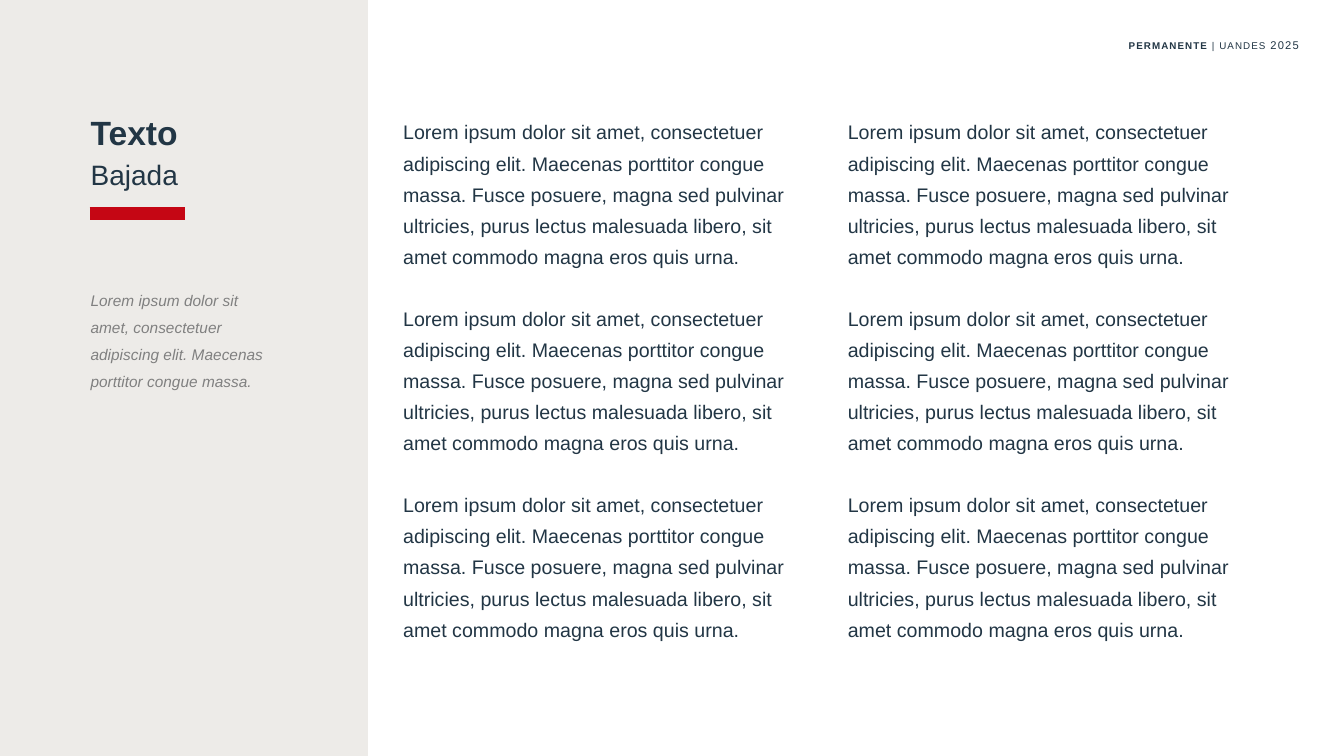
"""Build a text slide with a title panel and two columns of paragraphs."""
from dataclasses import dataclass

from lxml.etree import SubElement
from pptx import Presentation
from pptx.dml.color import RGBColor
from pptx.enum.shapes import MSO_CONNECTOR, MSO_SHAPE
from pptx.enum.text import PP_ALIGN
from pptx.oxml.ns import qn
from pptx.util import Inches, Pt


@dataclass(frozen=True)
class Theme:
    font: str = "Arial"
    ink: RGBColor = RGBColor(0x22, 0x36, 0x45)
    muted: RGBColor = RGBColor(0x80, 0x80, 0x80)
    panel: RGBColor = RGBColor(0xED, 0xEB, 0xE8)
    accent: RGBColor = RGBColor(0xC5, 0x06, 0x14)
    title: float = 24
    subtitle: float = 20
    body: float = 14
    note: float = 11
    year: float = 8
    header: float = 7


theme = Theme()
SENTENCE = "Lorem ipsum dolor sit amet, consectetuer adipiscing elit. Maecenas porttitor congue massa."
BODY = SENTENCE + (" Fusce posuere, magna sed pulvinar ultricies, purus lectus malesuada libero,"
                   " sit amet commodo magna eros quis urna.")

deck = Presentation()
deck.slide_width, deck.slide_height = Inches(13.33), Inches(7.5)
page = deck.slides.add_slide(deck.slide_layouts[6])


def add_span(para, text, size, color=theme.ink, bold=False, italic=False, tracking=None):
    span = para.add_run()
    span.text = text
    span.font.name, span.font.size = theme.font, Pt(size)
    span.font.bold, span.font.italic = bold, italic
    span.font.color.rgb = color
    if tracking:
        span.font._element.set("spc", str(round(tracking * 100)))


def add_box(left, top, width, height):
    box = page.shapes.add_textbox(Inches(left), Inches(top), Inches(width), Inches(height))
    box.text_frame.word_wrap = True
    return box.text_frame


panel = page.shapes.add_shape(MSO_SHAPE.RECTANGLE, 0, 0, Inches(3.65), deck.slide_height)
panel.shadow.inherit = False
panel.fill.solid()
panel.fill.fore_color.rgb = theme.panel
panel.line.fill.background()

title = add_box(0.8, 1.06, 4.21, 0.5)
add_span(title.paragraphs[0], "Texto", theme.title, bold=True)
subtitle = add_box(0.8, 1.51, 4.21, 0.44)
add_span(subtitle.paragraphs[0], "Bajada", theme.subtitle)

for left in (3.9, 8.31):
    column = add_box(left, 1.07, 4.01, 5.62)
    for index in range(3):
        para = column.add_paragraph() if index else column.paragraphs[0]
        para.line_spacing = Pt(22.2)
        if index:
            para.space_before = Pt(22.2)
        add_span(para, BODY, theme.body)

rule = page.shapes.add_connector(
    MSO_CONNECTOR.STRAIGHT, Inches(0.89), Inches(2.12), Inches(1.83), Inches(2.12))
rule.line.color.rgb = theme.accent
rule.line.width = Pt(9)
SubElement(rule._element.spPr, qn("a:effectLst"))

note = add_box(0.8, 2.76, 2.03, 1.14).paragraphs[0]
note.line_spacing = Pt(19.2)
add_span(note, SENTENCE, theme.note, color=theme.muted, italic=True)

header = add_box(7.16, 0.33, 5.82, 0.24).paragraphs[0]
header.alignment = PP_ALIGN.RIGHT
add_span(header, "PERMANENTE ", theme.header, bold=True, tracking=0.8)
add_span(header, "| UANDES ", theme.header, tracking=0.8)
add_span(header, "2025", theme.year, tracking=0.8)

deck.save("out.pptx")
